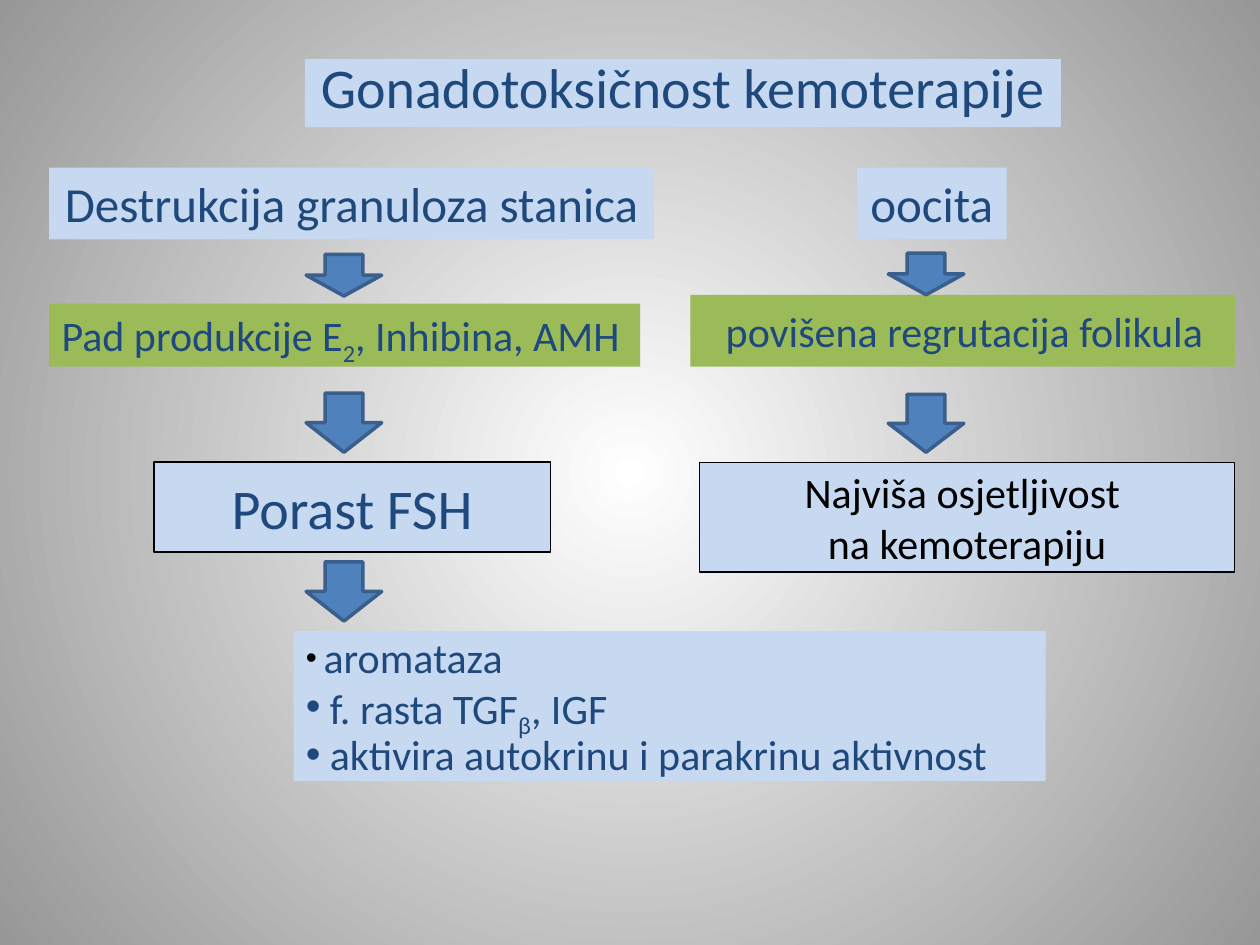
import pptx
import pptx.dml.color
import pptx.enum.shapes
import pptx.enum.text
import pptx.oxml.ns
import pptx.util
from lxml import etree

RGB = pptx.dml.color.RGBColor
PALE_BLUE = RGB(0xC6, 0xD9, 0xF1)
NAVY = RGB(0x1F, 0x49, 0x7D)
GREEN = RGB(0x9B, 0xBB, 0x59)
ARROW_BLUE = RGB(0x4F, 0x81, 0xBD)
ARROW_EDGE = RGB(0x3A, 0x5F, 0x8C)
BLACK = RGB(0, 0, 0)
WHITE = RGB(0xFF, 0xFF, 0xFF)
GREY = RGB(0x97, 0x97, 0x97)

SHAPE = pptx.enum.shapes.MSO_SHAPE
ANCHOR = pptx.enum.text.MSO_ANCHOR
ALIGN = pptx.enum.text.PP_ALIGN
FONT = "Calibri"

# The slide is a grid of 100 columns and 100 rows.
WIDTH = pptx.util.Inches(10)
HEIGHT = pptx.util.Inches(7.5)
ARROW_COLUMNS = 6


def inside(box, x, y, width, height):
    """Turn an offset and size within a region into a box on the slide grid."""
    return box[0] + x, box[1] + y, width, height


def add_block(slide, kind, box, fill, edge=None, edge_width=1):
    x, y, width, height = box
    block = slide.shapes.add_shape(
        kind, round(x * WIDTH / 100), round(y * HEIGHT / 100),
        round(width * WIDTH / 100), round(height * HEIGHT / 100))
    block.shadow.inherit = False
    block.fill.solid()
    block.fill.fore_color.rgb = fill
    if edge is None:
        block.line.fill.background()
    else:
        block.line.color.rgb = edge
        block.line.width = pptx.util.Pt(edge_width)
    return block


def add_arrow(slide, box):
    add_block(slide, SHAPE.DOWN_ARROW, box, ARROW_BLUE, ARROW_EDGE, 2)


def set_bullet(paragraph, indent, color, percent):
    properties = paragraph._p.get_or_add_pPr()
    properties.set("marL", str(pptx.util.Inches(indent)))
    properties.set("indent", str(-pptx.util.Inches(indent)))
    qn = pptx.oxml.ns.qn
    bullet_color = etree.SubElement(properties, qn("a:buClr"))
    etree.SubElement(bullet_color, qn("a:srgbClr"), val=str(color))
    etree.SubElement(properties, qn("a:buSzPct"), val=str(percent * 1000))
    etree.SubElement(properties, qn("a:buFont"), typeface="Arial")
    etree.SubElement(properties, qn("a:buChar"), char="•")


def add_label(slide, box, lines, size, fill=PALE_BLUE, color=NAVY, edge=None,
              edge_width=1, align=ALIGN.CENTER, anchor=ANCHOR.TOP,
              spacing=None, bullets=None):
    """Each line is a list of texts, of which every second one is a subscript."""
    label = add_block(slide, SHAPE.RECTANGLE, box, fill, edge, edge_width)
    frame = label.text_frame
    frame.word_wrap = align == ALIGN.LEFT
    frame.vertical_anchor = anchor
    for index, texts in enumerate(lines):
        paragraph = frame.add_paragraph() if index else frame.paragraphs[0]
        paragraph.alignment = align
        if spacing:
            paragraph.line_spacing = spacing
        if bullets:
            set_bullet(paragraph, *bullets[index])
        paragraph.font.name = FONT
        paragraph.font.size = pptx.util.Pt(size)
        paragraph.font.color.rgb = color
        for place, text in enumerate(texts):
            run = paragraph.add_run()
            run.text = text
            if place % 2:
                run._r.get_or_add_rPr().set("baseline", "-25000")
    return label


def paint_background(slide):
    fill = slide.background.fill
    fill.gradient()
    for stop, color, position in zip(fill.gradient_stops, (WHITE, GREY), (0, 1)):
        stop.color.rgb = color
        stop.position = position
    qn = pptx.oxml.ns.qn
    linear = next(slide.element.iter(qn("a:lin")))
    circle = etree.Element(qn("a:path"), path="circle")
    etree.SubElement(circle, qn("a:fillToRect"),
                     dict.fromkeys("ltrb", "50000"))
    linear.getparent().replace(linear, circle)


def add_title(slide, box):
    add_label(slide, box, [["Gonadotoksičnost kemoterapije"]], 32, spacing=0.8)


def add_granulosa_branch(slide, box):
    add_label(slide, inside(box, 0, 0, 48, 7.6),
              [["Destrukcija granuloza stanica"]], 28)
    add_label(slide, inside(box, 0, 14.4, 46.9, 6.67),
              [["Pad produkcije E", "2", ", Inhibina, AMH"]], 24,
              fill=GREEN, align=ALIGN.LEFT)
    add_label(slide, inside(box, 8.3, 31.2, 31.5, 9.47), [["Porast FSH"]], 32,
              edge=BLACK, anchor=ANCHOR.MIDDLE)
    for top, height in ((9.2, 4.4), (23.87, 6.27), (41.73, 6.27)):
        add_arrow(slide, inside(box, 20.4, top, ARROW_COLUMNS, height))


def add_oocyte_branch(slide, box):
    add_label(slide, inside(box, 13.2, 0, 11.9, 7.6), [["oocita"]], 28)
    recruitment = add_label(
        slide, inside(box, 0, 13.47, 43.2, 7.6),
        [["povišena regrutacija folikula"]], 24, fill=GREEN,
        align=ALIGN.LEFT, anchor=ANCHOR.MIDDLE)
    recruitment.text_frame.margin_left = pptx.util.Inches(0.28)
    add_label(slide, inside(box, 0.7, 31.2, 42.5, 11.6),
              [["Najviša osjetljivost "], ["na kemoterapiju"]], 24,
              color=BLACK, edge=BLACK, edge_width=0.75, anchor=ANCHOR.MIDDLE)
    for top, height in ((9.07, 4.4), (24, 6.13)):
        add_arrow(slide, inside(box, 15.7, top, ARROW_COLUMNS, height))


def add_effects(slide, box):
    add_label(slide, box,
              [["aromataza"],
               ["f. rasta TGF", "β", ", IGF"],
               ["aktivira autokrinu i parakrinu aktivnost"]], 24,
              align=ALIGN.LEFT, spacing=0.9,
              bullets=[(0.14, BLACK, 75), (0.19, NAVY, 100), (0.19, NAVY, 100)])


def main():
    deck = pptx.Presentation()
    deck.slide_width, deck.slide_height = WIDTH, HEIGHT
    slide = deck.slides.add_slide(deck.slide_layouts[6])
    paint_background(slide)
    add_title(slide, (24.2, 6.27, 60, 7.2))
    add_granulosa_branch(slide, (3.9, 17.73, 48, 48))
    add_oocyte_branch(slide, (54.8, 17.73, 43.2, 42.8))
    add_effects(slide, (23.3, 66.8, 59.7, 15.87))
    deck.save("out.pptx")


if __name__ == "__main__":
    main()
